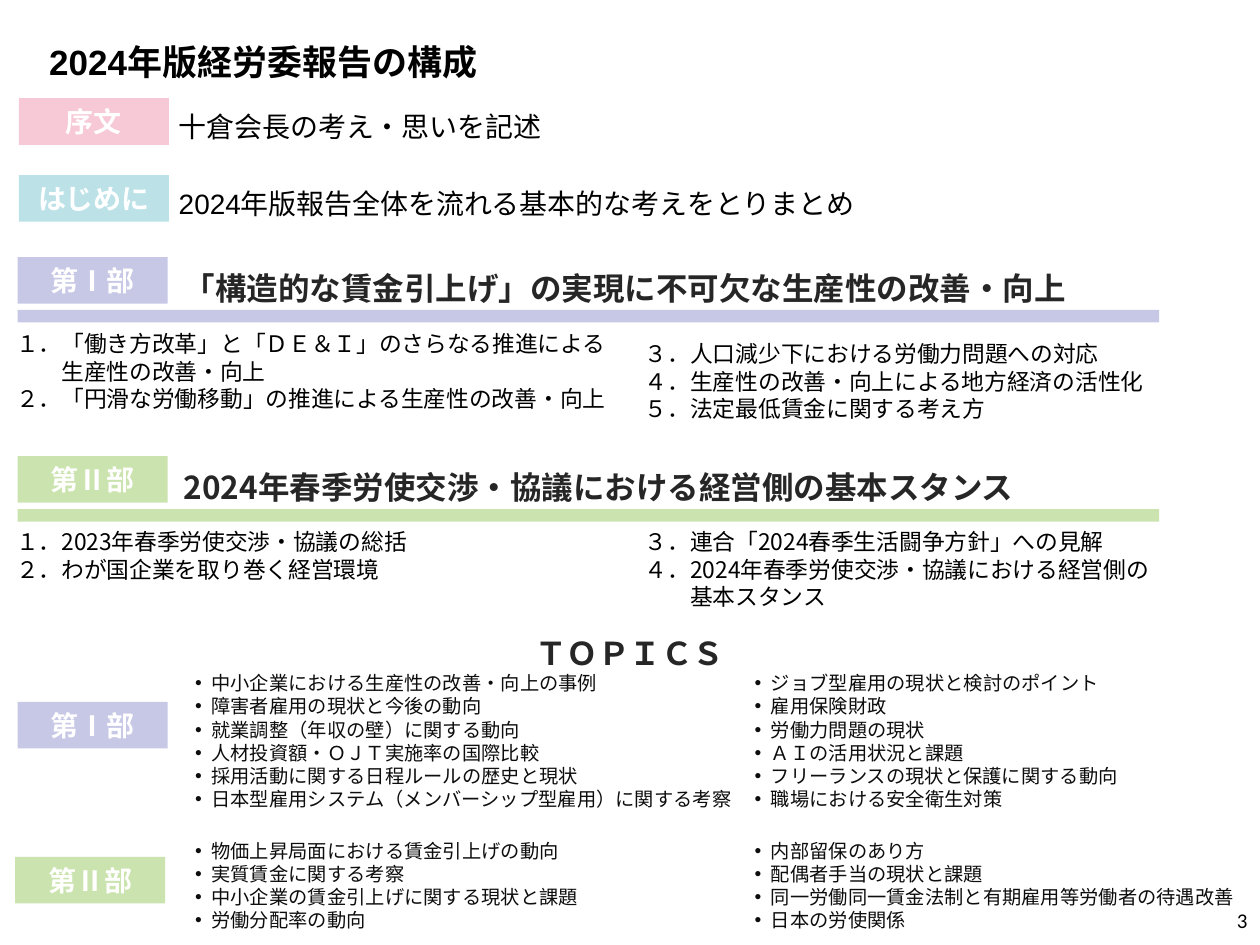
from lxml.etree import SubElement
from pptx import Presentation
from pptx.dml.color import RGBColor
from pptx.enum.shapes import MSO_SHAPE
from pptx.enum.text import MSO_ANCHOR, MSO_AUTO_SIZE, PP_ALIGN
from pptx.oxml.ns import qn
from pptx.util import Inches, Pt

COLORS = {
    "pink": "F7C8D6", "aqua": "BCE2E8", "lavender": "C7C8E5", "green": "CBE3AE",
    "white": "FFFFFF", "black": "000000", "heading": "262626", "topic": "0D0D0D",
}
GOTHIC = "Noto Sans CJK JP"
LABEL_WIDTH, LABEL_HEIGHT = 1.19, 0.37
COLUMN_LEFTS = (1.45, 5.89)
COLUMN_WIDTHS = (4.83, 4.1)


def write_text(shape, lines, size, color="black", font=GOTHIC, bold=False,
               align=PP_ALIGN.LEFT, anchor=MSO_ANCHOR.TOP, line=None, gap=0,
               hanging=0, bullet=None):
    frame = shape.text_frame
    frame.word_wrap = True
    frame.auto_size = MSO_AUTO_SIZE.NONE
    frame.vertical_anchor = anchor
    for index, text in enumerate(lines):
        paragraph = frame.add_paragraph() if index else frame.paragraphs[0]
        paragraph.text = text
        paragraph.alignment = align
        paragraph.space_before = Pt(gap if index else 0)
        if line:
            paragraph.line_spacing = Pt(line)
        properties = paragraph._p.get_or_add_pPr()
        if hanging:
            properties.set("marL", str(Inches(hanging)))
            properties.set("indent", str(-Inches(hanging)))
        if bullet:
            SubElement(properties, qn("a:buFont"), typeface="Arial")
            SubElement(properties, qn("a:buChar"), char=bullet)
        for run in paragraph.runs:
            run.font.size = Pt(size)
            run.font.bold = bold
            run.font.name = font
            run.font.color.rgb = RGBColor.from_string(COLORS[color])
            SubElement(run._r.get_or_add_rPr(), qn("a:ea"), typeface=GOTHIC)


def add_text(slide, left, top, width, height, lines, size, **text_format):
    shape = slide.shapes.add_textbox(Inches(left), Inches(top), Inches(width), Inches(height))
    write_text(shape, lines, size, **text_format)


def add_block(slide, left, top, width, height, color):
    shape = slide.shapes.add_shape(
        MSO_SHAPE.RECTANGLE, Inches(left), Inches(top), Inches(width), Inches(height))
    shape.shadow.inherit = False
    shape.fill.solid()
    shape.fill.fore_color.rgb = RGBColor.from_string(COLORS[color])
    shape.line.fill.background()
    return shape


def add_label(slide, left, top, text, color):
    label = add_block(slide, left, top, LABEL_WIDTH, LABEL_HEIGHT, color)
    write_text(label, [text], 16, color="white", bold=True,
               align=PP_ALIGN.CENTER, anchor=MSO_ANCHOR.MIDDLE)


def add_title(slide, left, top, width, height, text):
    title = slide.shapes.title
    title.left, title.top = Inches(left), Inches(top)
    title.width, title.height = Inches(width), Inches(height)
    title.text_frame.margin_left = Inches(0.15)
    write_text(title, [text], 20, font="Arial", bold=True, anchor=MSO_ANCHOR.MIDDLE)


def add_introduction(slide, left, top, rows):
    for index, (label, color, _) in enumerate(rows):
        add_label(slide, left, top + index * 0.61, label, color)
    add_text(slide, left + 1.17, top + 0.03, 5.82, 0.98, [row[2] for row in rows], 16,
             font="Arial", anchor=MSO_ANCHOR.MIDDLE, line=20, gap=24)


def add_part(slide, left, top, label, color, heading, columns):
    add_label(slide, left, top, label, color)
    add_block(slide, left, top + 0.42, 9.06, 0.1, color)
    add_text(slide, left + 1.22, top + 0.03, 8.51, 0.4, [heading], 18,
             color="heading", bold=True, line=23)
    for column_left, width, (offset, lines) in zip((0.03, 5.02), (4.97, 4.4), columns):
        add_text(slide, column_left, top + offset, width, 0.76, lines, 13,
                 line=15.7, hanging=0.36)


def add_topics(slide, label_left, label_top, top, height, label, color, columns):
    add_label(slide, label_left, label_top, label, color)
    for left, width, lines in zip(COLUMN_LEFTS, COLUMN_WIDTHS, columns):
        add_text(slide, left, top, width, height, lines, 11, color="topic",
                 line=13.25, hanging=0.13, bullet="•")


def main():
    presentation = Presentation()
    presentation.slide_width, presentation.slide_height = Inches(10), Inches(7.5)
    slide = presentation.slides.add_slide(presentation.slide_layouts[5])
    add_title(slide, 0.24, 0.21, 5.59, 0.55, "2024年版経労委報告の構成")
    add_introduction(slide, 0.15, 0.78, [
        ("序文", "pink", "十倉会長の考え・思いを記述"),
        ("はじめに", "aqua", "2024年版報告全体を流れる基本的な考えをとりまとめ"),
    ])
    add_part(slide, 0.14, 2.04, "第Ⅰ部", "lavender",
             "「構造的な賃金引上げ」の実現に不可欠な生産性の改善・向上", [
                 (0.53, ["１．「働き方改革」と「ＤＥ＆Ｉ」のさらなる推進による\v生産性の改善・向上",
                         "２．「円滑な労働移動」の推進による生産性の改善・向上"]),
                 (0.61, ["３．人口減少下における労働力問題への対応",
                         "４．生産性の改善・向上による地方経済の活性化",
                         "５．法定最低賃金に関する考え方"]),
             ])
    add_part(slide, 0.14, 3.62, "第Ⅱ部", "green",
             "2024年春季労使交渉・協議における経営側の基本スタンス", [
                 (0.52, ["１．2023年春季労使交渉・協議の総括",
                         "２．わが国企業を取り巻く経営環境"]),
                 (0.52, ["３．連合「2024春季生活闘争方針」への見解",
                         "４．2024年春季労使交渉・協議における経営側の\v基本スタンス"]),
             ])
    add_text(slide, 0, 4.96, 10, 0.4, ["ＴＯＰＩＣＳ"], 18, color="heading",
             bold=True, align=PP_ALIGN.CENTER, line=23)
    add_topics(slide, 0.14, 5.57, 5.28, 1.21, "第Ⅰ部", "lavender", [
        ["中小企業における生産性の改善・向上の事例",
         "障害者雇用の現状と今後の動向",
         "就業調整（年収の壁）に関する動向",
         "人材投資額・ＯＪＴ実施率の国際比較",
         "採用活動に関する日程ルールの歴史と現状",
         "日本型雇用システム（メンバーシップ型雇用）に関する考察"],
        ["ジョブ型雇用の現状と検討のポイント",
         "雇用保険財政",
         "労働力問題の現状",
         "ＡＩの活用状況と課題",
         "フリーランスの現状と保護に関する動向",
         "職場における安全衛生対策"],
    ])
    add_topics(slide, 0.12, 6.8, 6.61, 0.84, "第Ⅱ部", "green", [
        ["物価上昇局面における賃金引上げの動向",
         "実質賃金に関する考察",
         "中小企業の賃金引上げに関する現状と課題",
         "労働分配率の動向"],
        ["内部留保のあり方",
         "配偶者手当の現状と課題",
         "同一労働同一賃金法制と有期雇用等労働者の待遇改善",
         "日本の労使関係"],
    ])
    add_text(slide, 7.75, 7.1, 2.25, 0.4, ["3"], 12, font="Calibri",
             align=PP_ALIGN.RIGHT, anchor=MSO_ANCHOR.MIDDLE)
    presentation.save("out.pptx")


if __name__ == "__main__":
    main()
